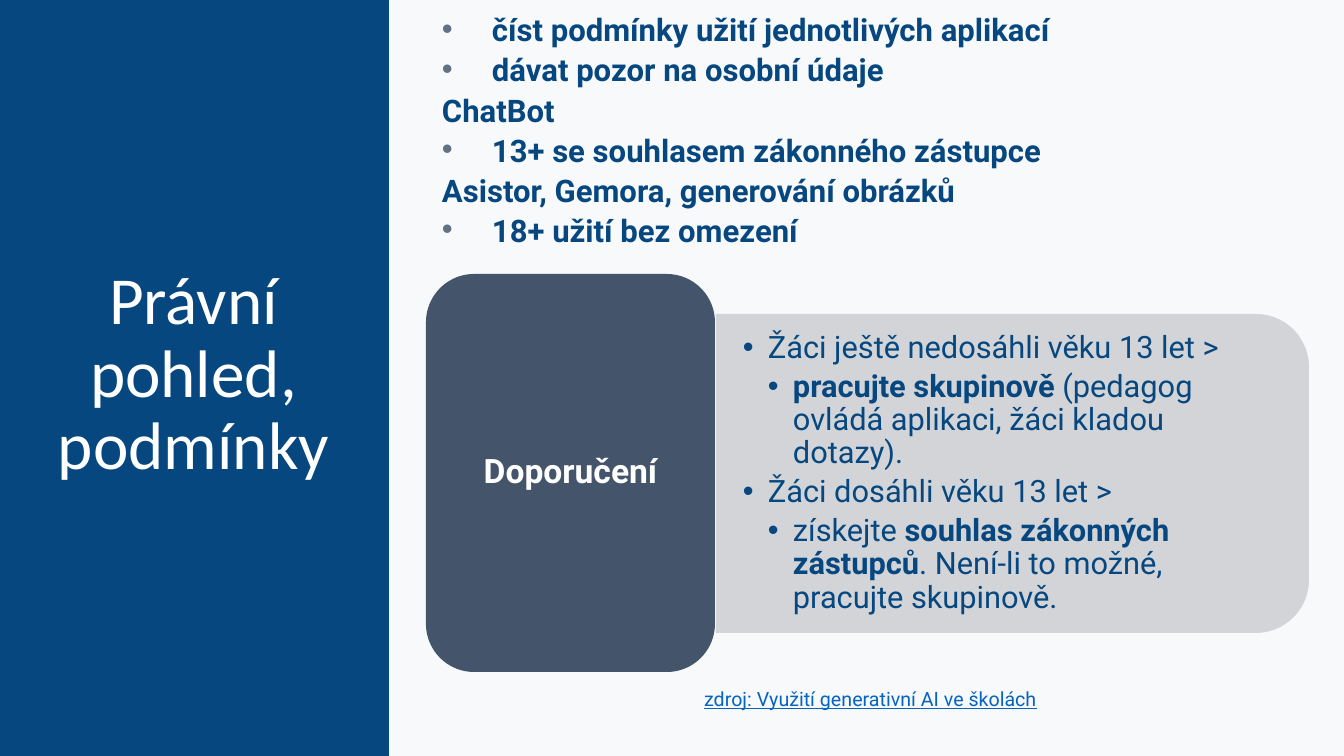
from lxml import etree
from pptx import Presentation
from pptx import util as u
from pptx.dml.color import RGBColor
from pptx.enum import shapes, text
from pptx.oxml import ns

PX = 914400 / 100.8  # EMU in one px


class Theme:
    page, navy, slate, panel = "F7F9FB", "07477F", "44546A", "CFD1D4"
    white, bullet, link = "FFFFFF", "5F7184", "0563C1"
    head, body = "Calibri", "Roboto"
    title_size, rules_size, advice_size, label_size, source_size = 48, 22.2, 22, 24, 14


def px(n):
    return u.Emu(round(n * PX))


def assign(obj, values):
    for name, value in values.items():
        setattr(obj, name, value)


def add_xml(parent, tag, **attrs):
    return etree.SubElement(parent, ns.qn(tag), attrs)


class Deck:
    def __init__(self, theme):
        self.t = theme
        self.prs = Presentation()
        assign(self.prs, {"slide_width": px(1344), "slide_height": px(756)})
        self.s = self.prs.slides.add_slide(self.prs.slide_layouts[5])
        self.paint(self.s.background.fill, theme.page)

    def paint(self, fill, color):
        fill.solid()
        fill.fore_color.rgb = RGBColor.from_string(color)

    def shape(self, kind, box, color, rotation=0, alpha=None):
        sp = self.s.shapes.add_shape(kind, *map(px, box))
        self.paint(sp.fill, color)
        sp.line.fill.background()
        assign(sp, {"rotation": rotation})
        sp.shadow.inherit = False
        if alpha:
            clr = sp._element.spPr.find(".//" + ns.qn("a:srgbClr"))
            add_xml(clr, "a:alpha", val=str(alpha * 1000))
        return sp

    def title(self, words, box):
        sp = self.s.shapes.title
        self.s.shapes._spTree.append(sp._element)
        assign(sp, dict(zip(("left", "top", "width", "height"), map(px, box))))
        self.fill_text(sp, [(words, {})], {"size": self.t.title_size, "font": self.t.head,
                                           "color": self.t.white, "align": "CENTER"}, "MIDDLE")

    def text(self, box, paragraphs, style, anchor="TOP", inset=(10, 5)):
        sp = self.s.shapes.add_textbox(*map(px, box))
        self.fill_text(sp, paragraphs, style, anchor, inset)

    def fill_text(self, sp, paragraphs, style, anchor="TOP", inset=(10, 5)):
        """Fill sp with (runs, overrides) pairs; every second run changes boldness."""
        tf = sp.text_frame
        x, y = map(px, inset)
        assign(tf, {"word_wrap": True, "auto_size": text.MSO_AUTO_SIZE.NONE,
                    "vertical_anchor": getattr(text.MSO_ANCHOR, anchor),
                    "margin_left": x, "margin_right": x, "margin_top": y, "margin_bottom": y})
        for i, (runs, overrides) in enumerate(paragraphs):
            p = tf.paragraphs[0] if i == 0 else tf.add_paragraph()
            f = {"font": self.t.body, "color": self.t.navy, **style, **overrides}
            assign(p, {"alignment": getattr(text.PP_ALIGN, f.get("align", "LEFT")),
                       "line_spacing": f.get("spacing", 0.9), "level": f.get("level", 0),
                       "space_before": u.Pt(f.get("before", 0)),
                       "space_after": u.Pt(f.get("after", 0))})
            self.indent(p, f)
            bold = f.get("bold", False)
            for words in [runs] if isinstance(runs, str) else runs:
                r = p.add_run()
                r.text = words
                assign(r.font, {"name": f["font"], "size": u.Pt(f["size"]), "bold": bold,
                                "underline": f.get("underline", False)})
                r.font.color.rgb = RGBColor.from_string(f["color"])
                bold = not bold

    def indent(self, p, f):
        pPr = p._p.get_or_add_pPr()
        left, first = f.get("indent", (0, 0))
        pPr.set("marL", str(px(left)))
        pPr.set("indent", str(px(first)))
        if "bullet" in f:
            add_xml(add_xml(pPr, "a:buClr"), "a:srgbClr", val=f["bullet"])
            add_xml(pPr, "a:buFont", typeface="Arial")
            add_xml(pPr, "a:buChar", char="•")
        else:
            add_xml(pPr, "a:buNone")


def main():
    t = Theme()
    deck = Deck(t)
    kinds = shapes.MSO_SHAPE

    deck.shape(kinds.RECTANGLE, (0, 0, 389, 756), t.navy)
    deck.title("Právní pohled, podmínky", (21, 65, 345, 621))

    item = {"indent": (56, -50), "bullet": t.bullet}
    heading = {"indent": (6, 0)}
    deck.text((426, 16, 883, 259), [
        ("číst podmínky užití jednotlivých aplikací", item),
        ("dávat pozor na osobní údaje", item),
        ("ChatBot", heading),
        ("13+ se souhlasem zákonného zástupce", item),
        ("Asistor, Gemora, generování obrázků", heading),
        ("18+ užití bez omezení", item),
    ], {"size": t.rules_size, "bold": True, "spacing": 0.7, "before": 10})

    deck.text((391, 685, 953, 55), [("zdroj: Využití generativní AI ve školách", {})],
              {"size": t.source_size, "color": t.link, "underline": True,
               "align": "CENTER", "before": 10, "indent": (50, -44)})

    deck.shape(kinds.ROUND_2_SAME_RECTANGLE, (853, 177, 319, 593), t.panel, 90, 90)
    age, advice = ({"level": n, "indent": (25 * n, -25), "bullet": t.navy} for n in (1, 2))
    deck.text((716, 330, 578, 287), [
        ("Žáci ještě nedosáhli věku 13 let >", age),
        (["pracujte skupinově ", "(pedagog ovládá aplikaci, žáci kladou dotazy)."],
         {**advice, "bold": True}),
        ("Žáci dosáhli věku 13 let >", age),
        (["získejte ", "souhlas zákonných zástupců",
          ". Není-li to možné, pracujte skupinově."], advice),
    ], {"size": t.advice_size, "after": 4}, "MIDDLE", (27, 14))

    label = deck.shape(kinds.ROUNDED_RECTANGLE, (426, 274, 289, 398), t.slate)
    deck.fill_text(label, [("Doporučení", {})],
                   {"size": t.label_size, "color": t.white, "bold": True, "align": "CENTER"},
                   "MIDDLE")

    deck.prs.save("out.pptx")


if __name__ == "__main__":
    main()
